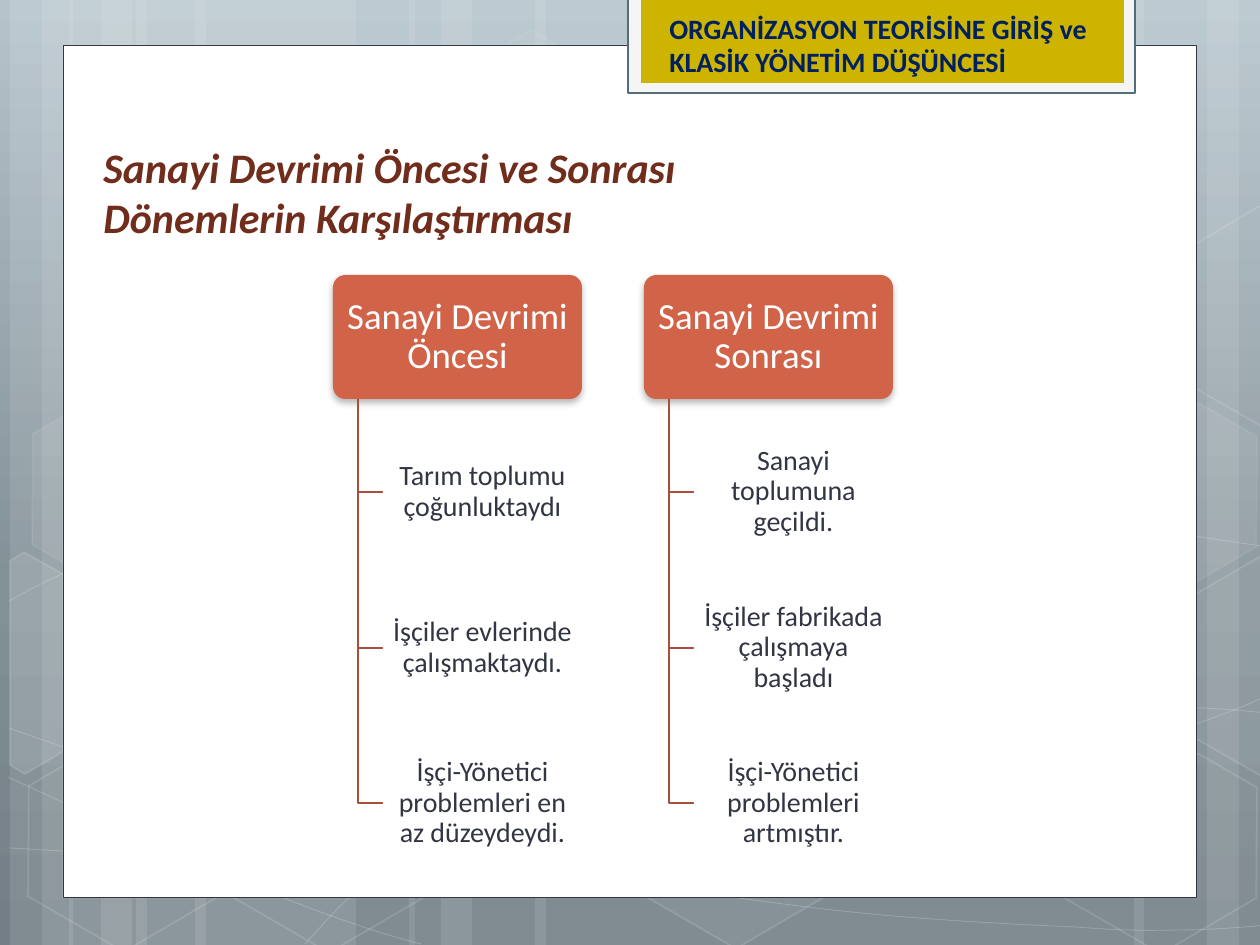
import copy

from lxml import etree
from pptx import Presentation
from pptx import util as u
from pptx.dml.color import RGBColor
from pptx.enum import shapes, text
from pptx.oxml.ns import qn

SCALE = 914400 / 126  # EMU per px
FONT = "Calibri"

WHITE = RGBColor(0xFF, 0xFF, 0xFF)
INK = RGBColor(0x32, 0x35, 0x43)
NAVY = RGBColor(0x00, 0x20, 0x60)
MAROON = RGBColor(0x71, 0x2D, 0x1C)
CORAL = RGBColor(0xD1, 0x63, 0x49)
STEM = RGBColor(0xA7, 0x4F, 0x3A)
GOLD = RGBColor(0xCC, 0xB4, 0x00)
PALE = RGBColor(0xF5, 0xF5, 0xF5)
SLATE = RGBColor(0x54, 0x6D, 0x7A)
SKY = [(0, RGBColor(0xB5, 0xC4, 0xCC)), (0.62, RGBColor(0x82, 0x90, 0x97)),
       (1, RGBColor(0x72, 0x7F, 0x86))]

# Background decoration: left and width of each stripe
STRIPES = [(136, 220), (10, 63), (42, 105), (195, 220), (69, 63), (101, 105),
           (924, 220), (1207, 63), (1134, 105), (535, 389), (409, 63), (441, 105)]

# Cubic curves: a start point, then three points for each segment
CURVES = [
    [(9, 848), (77, 852), (145, 856), (239, 854), (334, 853), (451, 851), (577, 838),
     (703, 825), (882, 801), (998, 777), (1113, 753), (1231, 716), (1269, 694)],
    [(9, 601), (45, 581), (82, 562), (152, 543), (224, 522), (326, 496), (437, 488),
     (549, 479), (685, 478), (824, 488), (963, 498), (1193, 537), (1269, 547)],
    [(8, 777), (160, 847), (311, 916), (421, 944)],
    [(9, 728), (48, 742), (88, 756), (161, 776), (234, 795), (344, 827), (450, 848),
     (554, 869), (687, 892), (791, 905), (896, 919), (1008, 924), (1075, 927),
     (1140, 932), (1158, 930), (1191, 930), (1223, 929), (1246, 927), (1269, 925)],
    [(305, 944), (328, 919), (350, 893), (381, 871), (411, 848), (454, 823), (489, 805),
     (524, 788), (546, 780), (592, 767), (638, 755), (722, 737), (766, 728),
     (811, 719), (818, 719), (857, 717), (896, 713), (958, 709), (1000, 708),
     (1045, 707), (1116, 708), (1116, 708), (1144, 708), (1173, 708), (1201, 708),
     (1223, 709), (1245, 711), (1256, 712), (1268, 713), (1264, 712), (1268, 713)],
]

# Left, top, fill opacity and line opacity of each hexagon
HEXAGONS = [(421, 45, 4, 8), (626, 742, 6, 12), (14, 745, 0, 12), (18, 393, 7, 8),
            (219, 746, 0, 12), (949, 571, 10, 12), (1051, 747, 0, 12), (1051, 396, 7, 8)]

# Hexagons cut by the slide edge: fill opacity and corners
CUT_HEXAGONS = [
    (10, [(10, 561), (24, 552), (121, 607), (120, 718), (25, 774), (10, 765)]),
    (4, [(1167, 611), (1261, 556), (1271, 562), (1271, 772), (1263, 777), (1167, 722)]),
    (0, [(1167, 261), (1261, 205), (1273, 212), (1271, 422), (1263, 427), (1167, 372)]),
]

COLUMNS = [
    ("Sanayi Devrimi Öncesi",
     ["Tarım toplumu çoğunluktaydı", "İşçiler evlerinde çalışmaktaydı.",
      "İşçi-Yönetici problemleri en az düzeydeydi."]),
    ("Sanayi Devrimi Sonrası",
     ["Sanayi toplumuna geçildi.", "İşçiler fabrikada çalışmaya başladı",
      "İşçi-Yönetici problemleri artmıştır."]),
]


def px(value):
    return u.Emu(round(value * SCALE))


def set_opacity(parent, percent):
    color = next(parent.iter(qn("a:srgbClr")))
    etree.SubElement(color, qn("a:alpha")).set("val", str(percent * 1000))


def paint(shape, fill=None, opacity=100, line=None, width=1, line_opacity=100):
    shape.shadow.inherit = False
    props = shape._element.spPr
    if fill is None or opacity == 0:
        shape.fill.background()
    else:
        shape.fill.solid()
        shape.fill.fore_color.rgb = fill
        if opacity < 100:
            set_opacity(props.find(qn("a:solidFill")), opacity)
    if line is None:
        shape.line.fill.background()
    else:
        shape.line.color.rgb = line
        shape.line.width = u.Pt(width)
        if line_opacity < 100:
            set_opacity(props.find(qn("a:ln")), line_opacity)


def add_block(page, kind, place, **look):
    block = page.shapes.add_shape(kind, *map(px, place))
    paint(block, **look)
    return block


def add_path(page, points, closed=False, **look):
    corners = [(px(x), px(y)) for x, y in points]
    builder = page.shapes.build_freeform(*corners[0], scale=1.0)
    builder.add_line_segments(corners[1:], close=closed)
    outline = builder.convert_to_shape()
    paint(outline, **look)
    return outline


def add_curve(page, nodes, **look):
    """Draw the nodes as a path, then join each three segments into one cubic."""
    outline = add_path(page, nodes, **look)
    segments = list(outline._element.iter(qn("a:lnTo")))
    for first, second, third in zip(*[iter(segments)] * 3):
        first.tag = qn("a:cubicBezTo")
        for segment in (second, third):
            first.append(segment[0])
            segment.getparent().remove(segment)


def write(box, words, color, **formats):
    box.text_frame.word_wrap = True
    para = box.text_frame.paragraphs[0]
    span = para.add_run()
    span.text = words
    span.font.color.rgb = color
    for name, value in {"name": FONT, **formats}.items():
        setattr(span.font, name, value)
    return para


def add_label(page, place, words, color, **formats):
    write(page.shapes.add_textbox(*map(px, place)), words, color, **formats)


def add_node(page, place, words, color, size, inset, **look):
    node = add_block(page, shapes.MSO_SHAPE.ROUNDED_RECTANGLE, place, **look)
    node.adjustments[0] = 0.1
    frame = node.text_frame
    frame.vertical_anchor = text.MSO_ANCHOR.MIDDLE
    for side in ("left", "top", "right", "bottom"):
        setattr(frame, f"margin_{side}", px(inset))
    para = write(node, words, color, size=u.Pt(size))
    para.alignment = text.PP_ALIGN.CENTER
    para.line_spacing = 0.9
    return node


def add_drop_shadow(shape):
    effects = shape._element.spPr.find(qn("a:effectLst"))
    shadow = etree.SubElement(effects, qn("a:outerShdw"), blurRad=str(u.Pt(4)),
                              dist=str(u.Pt(2)), dir="5400000", rotWithShape="0")
    etree.SubElement(shadow, qn("a:srgbClr"), val="000000")
    set_opacity(shadow, 28)


def draw_background(page):
    fill = page.background.fill
    fill.gradient()
    fill.gradient_angle = 270
    stops = next(page._element.iter(qn("a:gsLst")))
    stops.insert(1, copy.deepcopy(stops[0]))
    for stop, (position, color) in zip(fill.gradient_stops, SKY):
        stop.position = position
        stop.color.rgb = color
    for left, width in STRIPES:
        add_block(page, shapes.MSO_SHAPE.RECTANGLE, (left, 0, width, 945),
                  fill=WHITE, opacity=10)
    for nodes in CURVES:
        add_curve(page, nodes, line=WHITE, width=0.5, line_opacity=20)
    for left, top, opacity, line_opacity in HEXAGONS:
        hexagon = add_block(page, shapes.MSO_SHAPE.HEXAGON, (left, top, 220, 192), fill=WHITE,
                            opacity=opacity, line=WHITE, line_opacity=line_opacity)
        hexagon.rotation = 30
        hexagon.adjustments[0] = 0.285
    for opacity, corners in CUT_HEXAGONS:
        add_path(page, corners, closed=True, fill=WHITE, opacity=opacity,
                 line=WHITE, line_opacity=12)


def draw_column(page, left, heading, items):
    top, height = 275, 124
    header = add_node(page, (left, top, 249, height), heading, WHITE, 21, 5, fill=CORAL)
    add_drop_shadow(header)
    stem, item_left = left + 25, left + 50
    for row, words in enumerate(items):
        item_top = 430 + round(row * 155.6)
        middle = item_top + height // 2
        add_path(page, [(stem, top + height), (stem, middle), (item_left, middle)],
                 line=STEM, width=1.25)
        add_node(page, (item_left, item_top, 199, height), words, INK, 16, 3,
                 fill=WHITE, opacity=90)


def main():
    deck = Presentation()
    deck.slide_width, deck.slide_height = px(1260), px(945)
    page = deck.slides.add_slide(deck.slide_layouts[6])
    draw_background(page)

    # Card and topic tab
    rectangle = shapes.MSO_SHAPE.RECTANGLE
    add_block(page, rectangle, (63, 45, 1134, 853), fill=WHITE, line=INK, width=0.5)
    add_block(page, rectangle, (628, -2, 507, 95), fill=PALE, line=SLATE, width=1.25)
    add_block(page, rectangle, (641, -2, 483, 85), fill=GOLD)
    add_label(page, (657, 5, 479, 144), "ORGANİZASYON TEORİSİNE GİRİŞ ve KLASİK YÖNETİM DÜŞÜNCESİ",
              NAVY, size=u.Pt(16), bold=True)

    # Title and comparison
    add_label(page, (91, 135, 747, 115),
              "Sanayi Devrimi Öncesi ve Sonrası Dönemlerin Karşılaştırması",
              MAROON, size=u.Pt(24), bold=True, italic=True)
    for index, (heading, items) in enumerate(COLUMNS):
        draw_column(page, 333 + index * 311, heading, items)
    deck.save("out.pptx")


if __name__ == "__main__":
    main()
